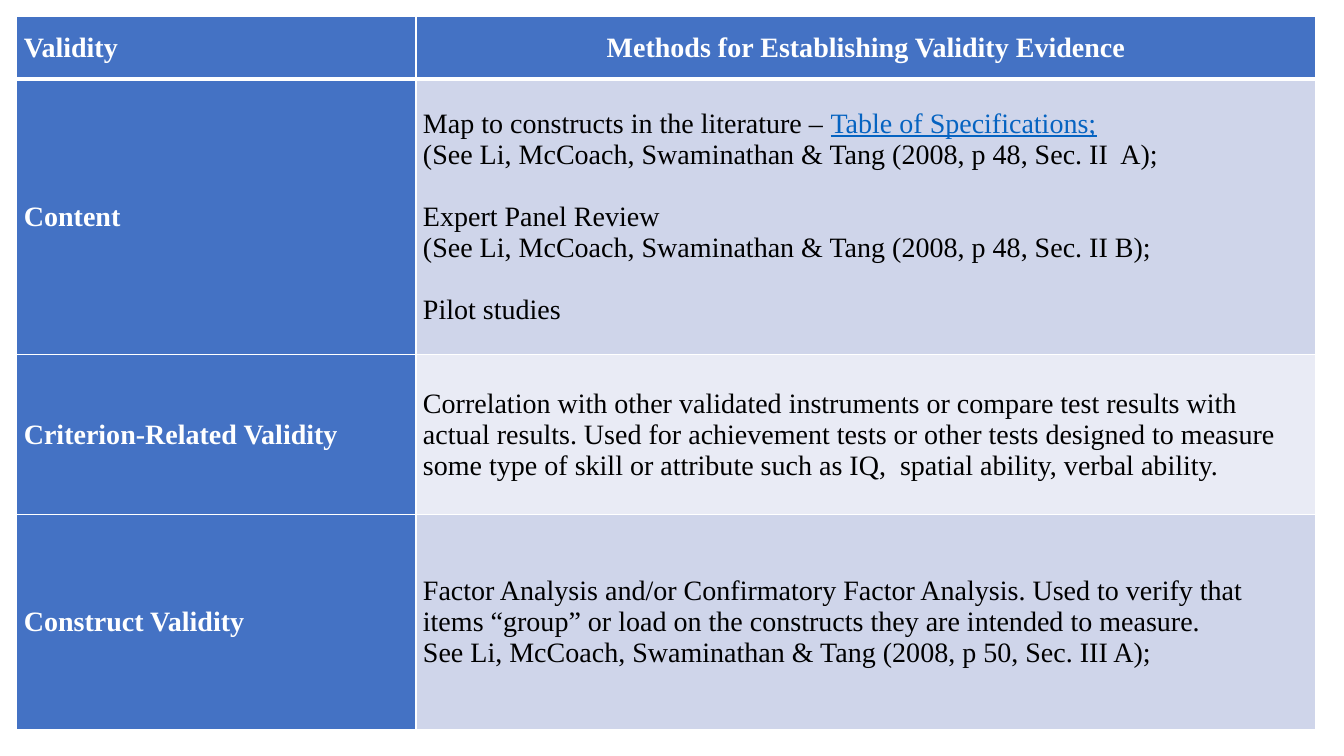
from dataclasses import dataclass
from lxml.etree import SubElement as Sub
from pptx import Presentation
from pptx.dml.color import RGBColor as Rgb
from pptx.enum.text import MSO_ANCHOR as Anchor, PP_ALIGN as Align
from pptx.oxml.ns import qn
from pptx.table import _Cell as Cell
from pptx.util import Inches, Pt

FONT = "Times New Roman"
SIZE = 20
GAP = 22.2
WIDE, HIGH = Inches(13.33), Inches(7.5)
COLS, ROWS = 80, 45
WHITE, BLACK, BLUE, LINK = "FFFFFF", "000000", "4472C4", "0563C1"
BANDS = ("CFD5EA", "E9EBF5")


@dataclass(frozen=True)
class Run:
    text: str
    link: bool = False


@dataclass(frozen=True)
class Para:
    runs: tuple[Run, ...]
    gap: float = 0


@dataclass(frozen=True)
class Row:
    tall: float
    name: str
    paras: tuple[Para, ...]


def line(text: str, gap: float = 0) -> Para:
    return Para((Run(text),), gap)


GRID = (23.76, 53.58)
TABLE = (
    Row(3.72, "Validity", (line("Methods for Establishing Validity Evidence"),)),
    Row(16.38, "Content", (
        Para((Run("Map to constructs in the literature – "),
              Run("Table of Specifications;", True))),
        line("(See Li, McCoach, Swaminathan & Tang (2008, p 48, Sec. II  A);"),
        line("Expert Panel Review", GAP),
        line("(See Li, McCoach, Swaminathan & Tang (2008, p 48, Sec. II B);"),
        line("Pilot studies", GAP),
    )),
    Row(9.54, "Criterion-Related Validity", (
        line("Correlation with other validated instruments or compare test "
             "results with actual results. Used for achievement tests or other "
             "tests designed to measure some type of skill or attribute such "
             "as IQ,  spatial ability, verbal ability."),
    )),
    Row(12.78, "Construct Validity", (
        line("Factor Analysis and/or Confirmatory Factor Analysis. Used to "
             "verify that items “group” or load on the constructs they are "
             "intended to measure."),
        line("See Li, McCoach, Swaminathan & Tang (2008, p 50, Sec. III A);"),
    )),
)


def across(cols: float) -> int:
    return round(WIDE * cols / COLS)


def down(rows: float) -> int:
    return round(HIGH * rows / ROWS)


def tint(code: str) -> Rgb:
    return Rgb.from_string(code)


def edge(cell: Cell, top: float, base: float) -> None:
    props = cell._tc.get_or_add_tcPr()
    for side, width in (("L", 1), ("R", 1), ("T", top), ("B", base)):
        rule = Sub(props, qn(f"a:ln{side}"), w=str(Pt(width)))
        Sub(Sub(rule, qn("a:solidFill")), qn("a:srgbClr"), val=WHITE)


def write(cell: Cell, paras: tuple[Para, ...], ink: str, bold: bool,
          align: Align) -> None:
    frame = cell.text_frame
    for num, para in enumerate(paras):
        block = frame.add_paragraph() if num else frame.paragraphs[0]
        block.alignment = align
        block.space_before = Pt(para.gap)
        for part in para.runs:
            run = block.add_run()
            run.text = part.text
            font = run.font
            font.name, font.size, font.bold = FONT, Pt(SIZE), bold
            font.underline = part.link
            font.color.rgb = tint(LINK if part.link else ink)


def paint(cell: Cell, fill: str, row: int) -> None:
    edge(cell, 3 if row == 1 else 1, 3 if row == 0 else 1)
    cell.fill.solid()
    cell.fill.fore_color.rgb = tint(fill)
    cell.vertical_anchor = Anchor.MIDDLE
    cell.margin_left = cell.margin_right = Inches(0.07)
    cell.margin_top = cell.margin_bottom = 0


def main() -> None:
    deck = Presentation()
    deck.slide_width, deck.slide_height = WIDE, HIGH
    slide = deck.slides.add_slide(deck.slide_layouts[6])
    table = slide.shapes.add_table(
        len(TABLE), len(GRID), across(1), down(1),
        across(sum(GRID)), down(sum(row.tall for row in TABLE))).table
    table.horz_banding = False
    for col, width in zip(table.columns, GRID):
        col.width = across(width)
    for num, row in enumerate(TABLE):
        table.rows[num].height = down(row.tall)
        head = num == 0
        name, body = table.cell(num, 0), table.cell(num, 1)
        paint(name, BLUE, num)
        paint(body, BLUE if head else BANDS[(num - 1) % 2], num)
        write(name, (line(row.name),), WHITE, True, Align.LEFT)
        write(body, row.paras, WHITE if head else BLACK, head,
              Align.CENTER if head else Align.LEFT)
    deck.save("out.pptx")


if __name__ == "__main__":
    main()
